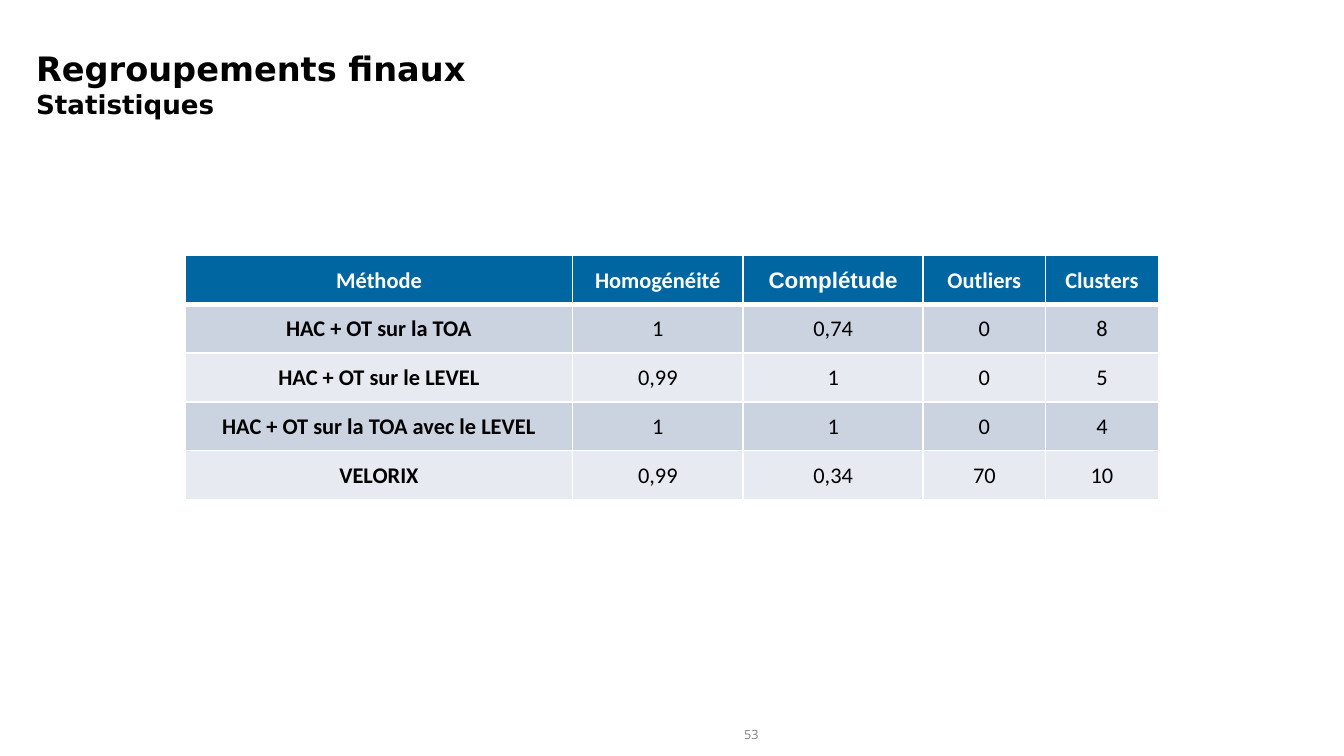
from lxml.etree import SubElement
from pptx import Presentation
from pptx.dml.color import RGBColor
from pptx.enum.text import MSO_ANCHOR, PP_ALIGN
from pptx.oxml.ns import qn
from pptx.util import Inches, Pt

WIDTH = 10
HEIGHT = WIDTH * 9 / 16
BLACK = RGBColor(0x00, 0x00, 0x00)
WHITE = RGBColor(0xFF, 0xFF, 0xFF)
GREY = RGBColor(0x81, 0x81, 0x81)
BLUE = RGBColor(0x00, 0x66, 0xA1)
DARK_BAND = RGBColor(0xCC, 0xD3, 0xE0)
LIGHT_BAND = RGBColor(0xE7, 0xEA, 0xF0)

COLUMN_WIDTHS = [2.88, 1.27, 1.34, 0.91, 0.84]
STATISTICS = [
    ["Méthode", "Homogénéité", "Complétude", "Outliers", "Clusters"],
    ["HAC + OT sur la TOA", "1", "0,74", "0", "8"],
    ["HAC + OT sur le LEVEL", "0,99", "1", "0", "5"],
    ["HAC + OT sur la TOA avec le LEVEL", "1", "1", "0", "4"],
    ["VELORIX", "0,99", "0,34", "70", "10"],
]


class SlideBuilder:
    """Holds the style and the slide; boxes are (left, top, width, height) in percent of it."""

    title_font, table_font, number_font = "DejaVu Sans", "Calibri", "Open Sans"

    def __init__(self, prs):
        self.prs = prs
        self.slide = prs.slides.add_slide(prs.slide_layouts[6])

    def place(self, box):
        w, h = self.prs.slide_width, self.prs.slide_height
        return [round(share * side / 100) for share, side in zip(box, (w, h, w, h))]

    def format_run(self, r, font, size, color, bold=False):
        r.font.name, r.font.size, r.font.bold = font, Pt(size), bold
        r.font.color.rgb = color

    def text_box(self, box, text):
        tf = self.slide.shapes.add_textbox(*self.place(box)).text_frame
        tf.word_wrap = True
        tf.text = text
        return tf

    def title(self, box, heading, subheading):
        tf = self.text_box(box, f"{heading}\v{subheading}")
        for r, size in zip(tf.paragraphs[0].runs, (18, 14)):
            self.format_run(r, self.title_font, size, BLACK, bold=True)

    def page_number(self, box, number):
        tf = self.text_box(box, str(number))
        tf.vertical_anchor = MSO_ANCHOR.MIDDLE
        tf.margin_left = tf.margin_right = Inches(0.08)
        tf.margin_top = tf.margin_bottom = Inches(0.04)
        p = tf.paragraphs[0]
        p.alignment = PP_ALIGN.CENTER
        self.format_run(p.runs[0], self.number_font, 6.8, GREY)

    def borders(self, cell, **widths):
        """Draw white cell borders, one width in points per side (L, R, T, B)."""
        tc_pr = cell._tc.get_or_add_tcPr()
        for side, width in widths.items():
            ln = SubElement(tc_pr, qn(f"a:ln{side}"), w=str(Pt(width)))
            fill = SubElement(ln, qn("a:solidFill"))
            SubElement(fill, qn("a:srgbClr"), val=str(WHITE))

    def cell(self, cell, text, fill, color, bold, font, top, bottom):
        self.borders(cell, L=1, R=1, T=top, B=bottom)
        cell.fill.solid()
        cell.fill.fore_color.rgb = fill
        cell.vertical_anchor = MSO_ANCHOR.MIDDLE
        cell.margin_left = cell.margin_right = cell.margin_top = Inches(0.01)
        cell.margin_bottom = 0
        cell.text = text
        p = cell.text_frame.paragraphs[0]
        p.alignment = PP_ALIGN.CENTER
        self.format_run(p.runs[0], font, 12, color, bold)

    def table(self, box, rows, widths):
        frame = self.slide.shapes.add_table(len(rows), len(widths), *self.place(box))
        table = frame.table
        for column, width in zip(table.columns, widths):
            column.width = Inches(width)
        for i, row in enumerate(rows):
            header = i == 0
            fill = BLUE if header else DARK_BAND if i % 2 else LIGHT_BAND
            for j, text in enumerate(row):
                self.cell(
                    table.cell(i, j), text, fill,
                    color=WHITE if header else BLACK,
                    bold=header or j == 0,
                    font="Arial" if text == "Complétude" else self.table_font,
                    top=3 if i == 1 else 1,
                    bottom=3 if header else 1,
                )


def main():
    prs = Presentation()
    prs.slide_width, prs.slide_height = Inches(WIDTH), Inches(HEIGHT)
    s = SlideBuilder(prs)
    s.page_number((52.5, 95.3, 6.8, 3.6), 53)
    s.table((13.8, 33.8, 72.4, 32.3), STATISTICS, COLUMN_WIDTHS)
    s.title((1.7, 5.5, 63.3, 11), "Regroupements finaux", "Statistiques")
    prs.save("out.pptx")


if __name__ == "__main__":
    main()
